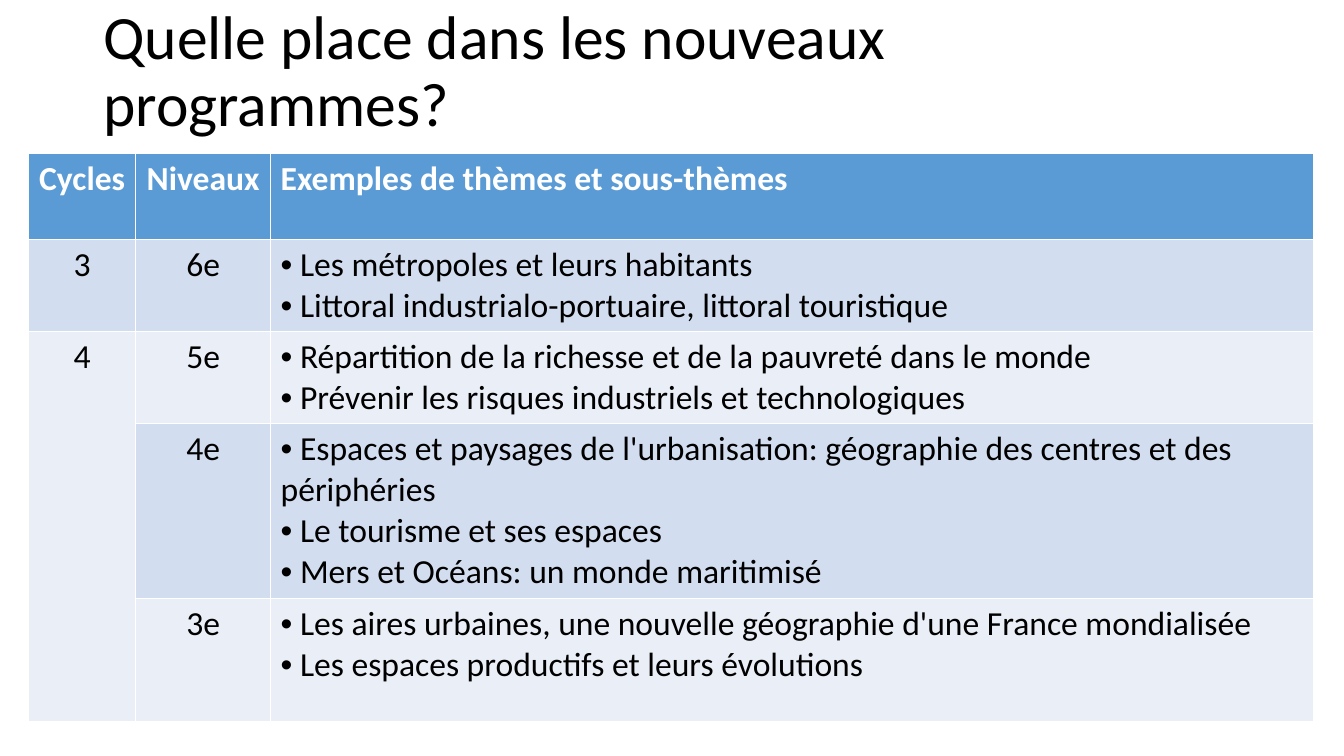
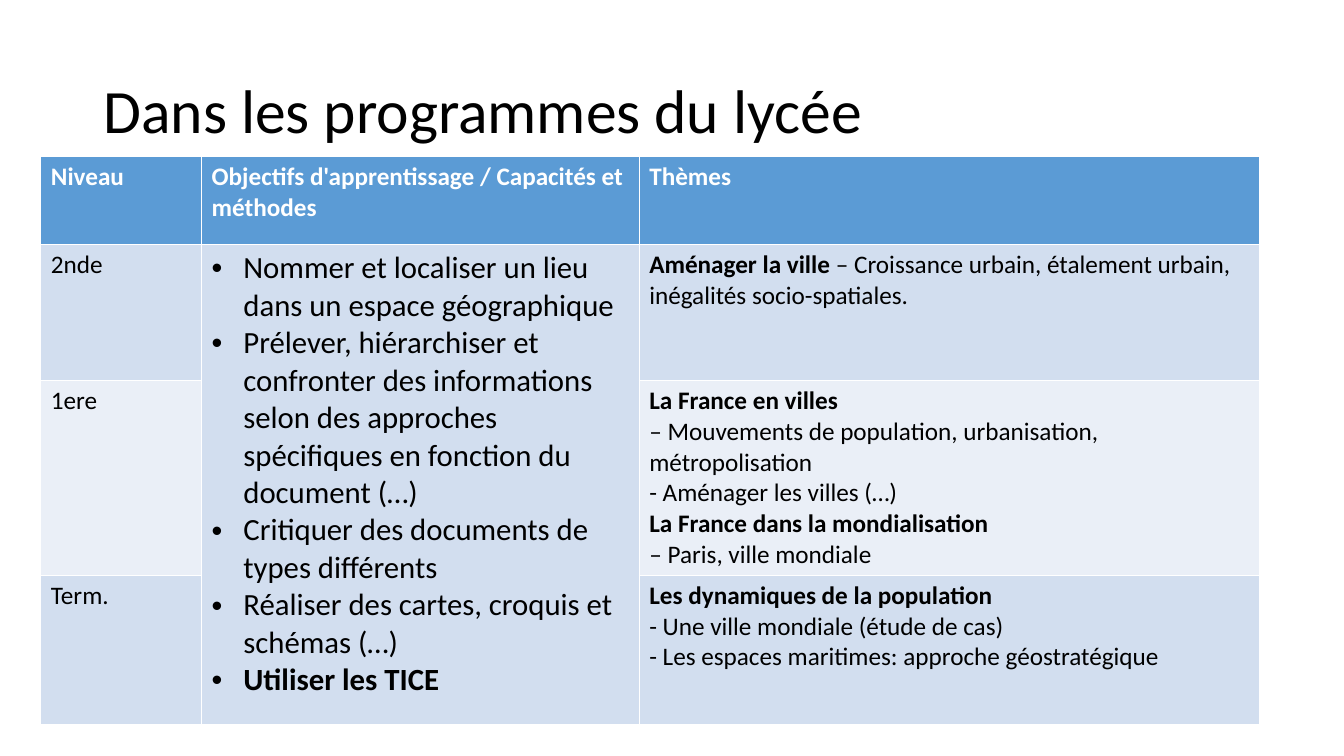
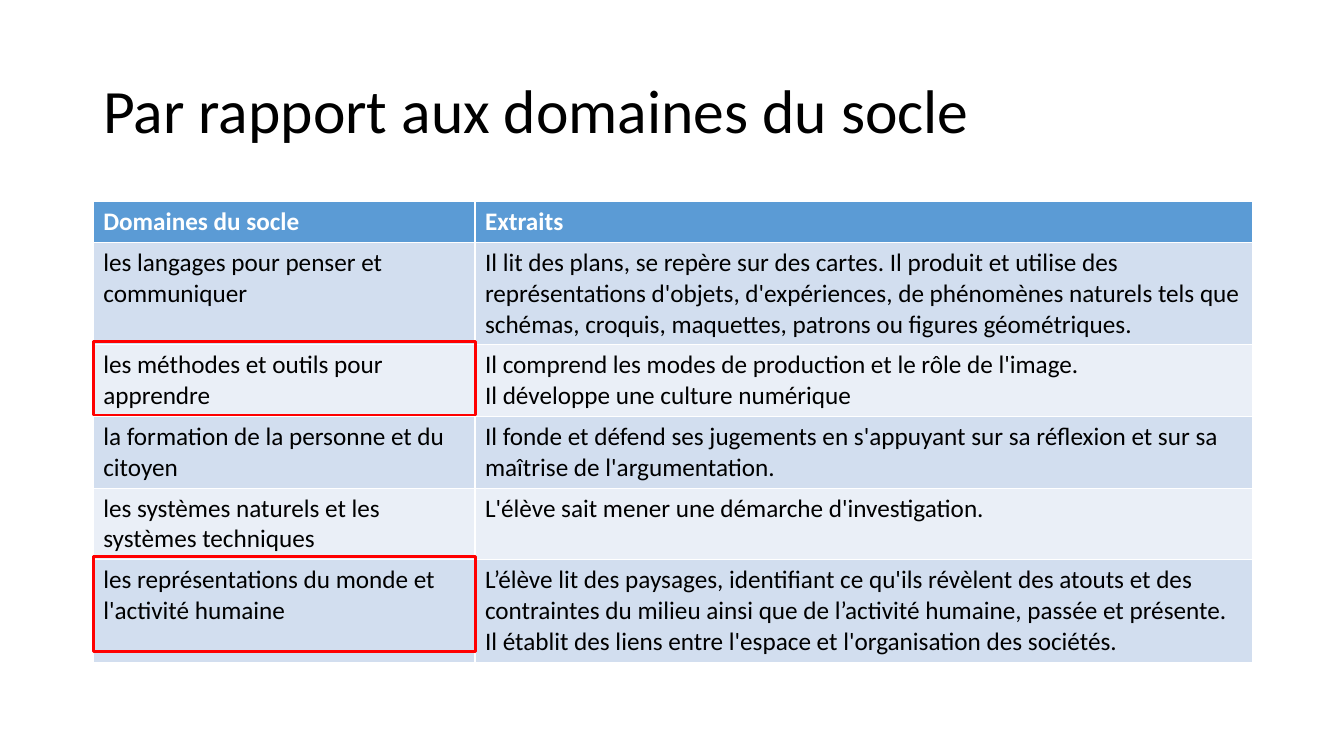
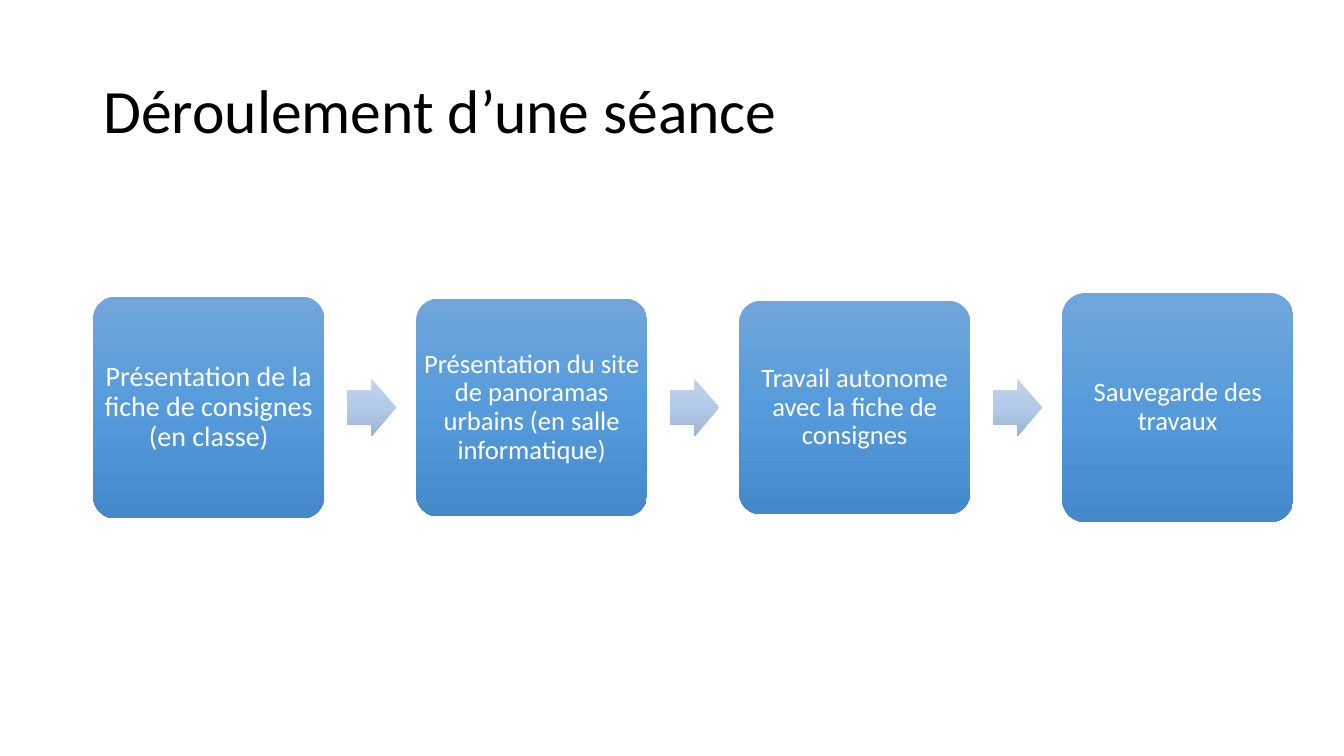
from copy import deepcopy
from dataclasses import dataclass, field

from lxml.etree import SubElement
from pptx import Presentation
from pptx.dml.color import RGBColor
from pptx.enum.shapes import MSO_SHAPE as Shape
from pptx.enum.text import MSO_ANCHOR as Anchor, MSO_AUTO_SIZE as AutoSize, PP_ALIGN as Align
from pptx.oxml.ns import qn
from pptx.util import Cm, Pt


@dataclass(frozen=True)
class Theme:
    font: str = "Calibri"
    ink: str = "000000"
    paper: str = "FFFFFF"
    header: str = "5B9BD5"
    bands: tuple = ("EAEFF7", "D2DEEF")
    highlight: str = "FF0000"
    step_gradient: tuple = ("71A6DB", "559BDB", "448ACA")
    arrow_gradient: tuple = ("C0D2EB", "B3CBE9", "9BB4D3")
    title_size: int = 44
    large_size: int = 24
    list_size: int = 22
    body_size: int = 18


@dataclass
class Grid:
    """Table contents; lengths in cm, the per-column settings keyed by column number."""
    left: float
    top: float
    columns: list
    heights: list
    rows: list
    size: int
    column_sizes: dict = field(default_factory=dict)
    bullet_indents: dict = field(default_factory=dict)
    centred: tuple = ()
    merged_column: int = None
    merged_from: int = 0


theme = Theme()


def write(frame, text, size, color=theme.ink, bold=False, align=Align.LEFT,
          spacing=None, bullet_indent=None):
    """Write one paragraph per line; text between ** marks is bold."""
    frame.word_wrap = True
    for number, line in enumerate(text.split("\n")):
        paragraph = frame.add_paragraph() if number else frame.paragraphs[0]
        paragraph.alignment = align
        if spacing:
            paragraph.line_spacing = spacing
        if bullet_indent is not None:
            properties = paragraph._p.get_or_add_pPr()
            properties.set("marL", str(Cm(bullet_indent)))
            properties.set("indent", str(-Cm(bullet_indent)))
            SubElement(properties, qn("a:buFont"), typeface="Arial")
            SubElement(properties, qn("a:buChar"), char="•")
        for position, part in enumerate(line.split("**")):
            if part:
                run = paragraph.add_run()
                run.text = part
                run.font.name = theme.font
                run.font.size = Pt(size)
                run.font.bold = bold or position % 2 == 1
                run.font.color.rgb = RGBColor.from_string(color)


def shade(shape, colors):
    """Fill with a three-colour gradient from top to bottom, without outline or shadow."""
    shape.shadow.inherit = False
    shape.line.fill.background()
    shape.fill.gradient()
    shape.fill.gradient_angle = 270
    stops = shape._element.spPr.find(".//" + qn("a:gsLst"))
    stops.append(deepcopy(stops[0]))
    for stop, color, position in zip(shape.fill.gradient_stops, colors, (0, 0.5, 1)):
        stop.color.rgb = RGBColor.from_string(color)
        stop.position = position


deck = Presentation()
deck.slide_width, deck.slide_height = Cm(33.87), Cm(19.05)

# Titles: text, top, width
titles = [
    ("Quelle place dans les nouveaux programmes?", 0, 29),
    ("Dans les programmes du lycée", 1.01, 29.21),
    ("Par rapport aux domaines du socle", 1.01, 29.21),
    ("Déroulement d’une séance", 1.01, 29.21),
]
slides = []
for text, top, width in titles:
    slide = deck.slides.add_slide(deck.slide_layouts[5])
    title = slide.shapes.title
    title.left, title.top, title.width, title.height = Cm(2.35), Cm(top), Cm(width), Cm(3.68)
    title.text_frame.auto_size = AutoSize.NONE
    title.text_frame.vertical_anchor = Anchor.MIDDLE
    write(title.text_frame, text, theme.title_size, spacing=0.9)
    slides.append(slide)
college_slide, lycee_slide, socle_slide, session_slide = slides

# Tables
college = Grid(
    left=0.72, top=3.87, columns=[2.7, 3.4, 26.29], heights=[2.16, 2.32, 2.32, 4.4, 3.12],
    size=theme.large_size, bullet_indents={2: 0}, centred=(0, 1),
    merged_column=0, merged_from=2,
    rows=[
        ("Cycles", "Niveaux", "Exemples de thèmes et sous-thèmes"),
        ("3", "6e", " Les métropoles et leurs habitants\n"
                    " Littoral industrialo-portuaire, littoral touristique"),
        ("4", "5e", " Répartition de la richesse et de la pauvreté dans le monde\n"
                    " Prévenir les risques industriels et technologiques"),
        ("", "4e", " Espaces et paysages de l'urbanisation: géographie des centres et des "
                   "périphéries\n"
                   " Le tourisme et ses espaces\n"
                   " Mers et Océans: un monde maritimisé"),
        ("", "3e", " Les aires urbaines, une nouvelle géographie d'une France mondialisée\n"
                   " Les espaces productifs et leurs évolutions"),
    ],
)
lycee = Grid(
    left=1.03, top=3.95, columns=[4.05, 11.03, 15.63], heights=[2.21, 3.43, 4.9, 3.76],
    size=theme.body_size, column_sizes={1: theme.list_size}, bullet_indents={1: 0.8},
    merged_column=1, merged_from=1,
    rows=[
        ("Niveau", "Objectifs d'apprentissage / Capacités et méthodes", "Thèmes"),
        ("2nde",
         "Nommer et localiser un lieu dans un espace géographique\n"
         "Prélever, hiérarchiser et confronter des informations selon des approches "
         "spécifiques en fonction du document (…)\n"
         "Critiquer des documents de types différents\n"
         "Réaliser des cartes, croquis et schémas (…)\n"
         "**Utiliser les TICE**",
         "**Aménager la ville** – Croissance urbain, étalement urbain, "
         "inégalités socio-spatiales."),
        ("1ere", "",
         "**La France en villes**\n"
         "– Mouvements de population, urbanisation, métropolisation\n"
         "- Aménager les villes (…)\n"
         "**La France dans la mondialisation**\n"
         "– Paris, ville mondiale"),
        ("Term.", "",
         "**Les dynamiques de la population**\n"
         "- Une ville mondiale (étude de cas)\n"
         "- Les espaces maritimes: approche géostratégique"),
    ],
)
socle = Grid(
    left=2.35, top=5.08, columns=[9.62, 19.59], heights=[1.03, 2.58, 1.8, 1.8, 1.8, 2.58],
    size=theme.body_size,
    rows=[
        ("Domaines du socle", "Extraits"),
        ("les langages pour penser et communiquer",
         "Il lit des plans, se repère sur des cartes. Il produit et utilise des "
         "représentations d'objets, d'expériences, de phénomènes naturels tels que "
         "schémas, croquis, maquettes, patrons ou figures géométriques."),
        ("les méthodes et outils pour apprendre",
         "Il comprend les modes de production et le rôle de l'image.\n"
         "Il développe une culture numérique"),
        ("la formation de la personne et du citoyen",
         "Il fonde et défend ses jugements en s'appuyant sur sa réflexion et sur sa "
         "maîtrise de l'argumentation."),
        ("les systèmes naturels et les systèmes techniques",
         "L'élève sait mener une démarche d'investigation."),
        ("les représentations du monde et l'activité humaine",
         "L’élève lit des paysages, identifiant ce qu'ils révèlent des atouts et des "
         "contraintes du milieu ainsi que de l’activité humaine, passée et présente. "
         "Il établit des liens entre l'espace et l'organisation des sociétés."),
    ],
)

for slide, grid in ((college_slide, college), (lycee_slide, lycee), (socle_slide, socle)):
    table = slide.shapes.add_table(
        len(grid.rows), len(grid.columns), Cm(grid.left), Cm(grid.top),
        Cm(sum(grid.columns)), Cm(sum(grid.heights))).table
    for column, width in zip(table.columns, grid.columns):
        column.width = Cm(width)
    for row, height in zip(table.rows, grid.heights):
        row.height = Cm(height)
    if grid.merged_column is not None:
        first = table.cell(grid.merged_from, grid.merged_column)
        first.merge(table.cell(len(grid.rows) - 1, grid.merged_column))
    for r, texts in enumerate(grid.rows):
        is_header = r == 0
        for c, text in enumerate(texts):
            cell = table.cell(r, c)
            cell.fill.solid()
            cell.fill.fore_color.rgb = RGBColor.from_string(
                theme.header if is_header else theme.bands[r % 2])
            if not cell.is_spanned:
                write(cell.text_frame, text,
                      size=grid.size if is_header else grid.column_sizes.get(c, grid.size),
                      color=theme.paper if is_header else theme.ink,
                      bold=is_header,
                      align=Align.CENTER if c in grid.centred else Align.LEFT,
                      bullet_indent=None if is_header else grid.bullet_indents.get(c))

# Frames around the two domains concerned
for top, height in ((8.61, 1.85), (14.02, 2.39)):
    frame = socle_slide.shapes.add_shape(
        Shape.RECTANGLE, Cm(2.36), Cm(top), Cm(9.63), Cm(height))
    frame.shadow.inherit = False
    frame.fill.background()
    frame.line.color.rgb = RGBColor.from_string(theme.highlight)
    frame.line.width = Pt(2)

# Session steps: text, height, type size
steps = [
    ("Présentation de la fiche de consignes (en classe)", 5.59, 20),
    ("Présentation du site de panoramas urbains (en salle informatique)", 5.49, 19),
    ("Travail autonome avec la fiche de consignes", 5.38, 19),
    ("Sauvegarde des travaux", 5.77, 19),
]
step_width, step_pitch, middle = 5.82, 8.14, 10.27
arrow_offset, arrow_width, arrow_height = 6.39, 1.24, 1.45
for number, (text, height, size) in enumerate(steps):
    left = 2.35 + number * step_pitch
    step = session_slide.shapes.add_shape(
        Shape.ROUNDED_RECTANGLE, Cm(left), Cm(middle - height / 2), Cm(step_width), Cm(height))
    step.adjustments[0] = 0.1
    shade(step, theme.step_gradient)
    body = step.text_frame
    body.margin_left = body.margin_right = body.margin_top = body.margin_bottom = Cm(0.04)
    body.vertical_anchor = Anchor.MIDDLE
    write(body, text, size, color=theme.paper, align=Align.CENTER, spacing=0.9)
    if number < len(steps) - 1:
        arrow = session_slide.shapes.add_shape(
            Shape.RIGHT_ARROW, Cm(left + arrow_offset), Cm(middle - arrow_height / 2),
            Cm(arrow_width), Cm(arrow_height))
        arrow.adjustments[0] = 0.6
        arrow.adjustments[1] = 0.5
        shade(arrow, theme.arrow_gradient)

deck.save("out.pptx")
